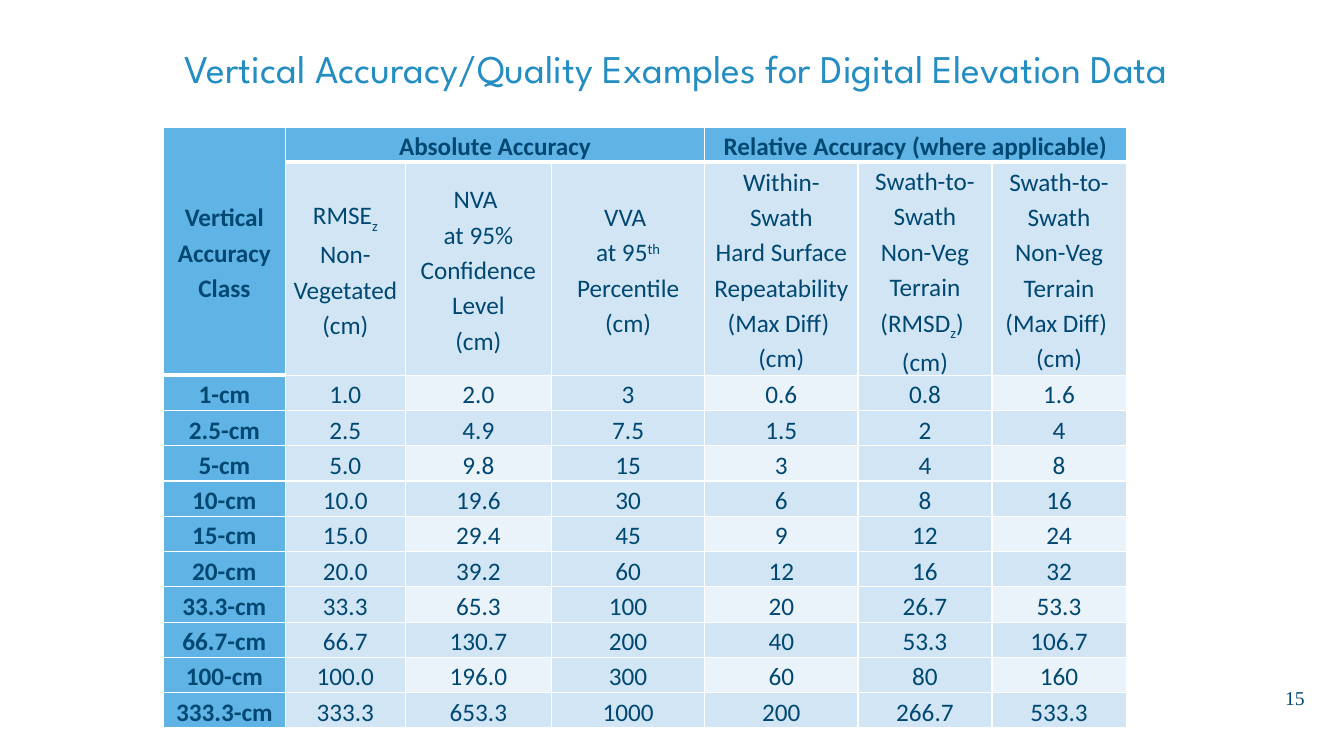
from dataclasses import dataclass

import lxml.etree
import pptx
import pptx.dml.color
import pptx.enum.text
import pptx.oxml.ns
import pptx.util

Inches = pptx.util.Inches
Align = pptx.enum.text.PP_ALIGN
Anchor = pptx.enum.text.MSO_ANCHOR

INK, BLUE, PALE, LIGHT, WHITE = "004872", "5FB4E5", "D2E5F5", "EAF2FA", "FFFFFF"


@dataclass(frozen=True)
class Bit:
    text: str
    shift: int = 0


@dataclass(frozen=True)
class Head:
    row: int
    col: int
    lines: tuple[tuple[Bit, ...], ...]
    rows: int = 1
    cols: int = 1


@dataclass(frozen=True)
class Label:
    text: str
    box: tuple[float, float, float, float]
    font: str
    size: int
    ink: str
    align: Align
    anchor: Anchor
    wrap: bool
    inset: float


def plain(*lines: str) -> tuple[tuple[Bit, ...], ...]:
    return tuple((Bit(line),) for line in lines)


LABELS = (
    Label("15", (12.68, 6.67, 0.35, 0.5), "Times New Roman", 14, INK,
          Align.RIGHT, Anchor.MIDDLE, False, 0),
    Label("Vertical Accuracy/Quality Examples for Digital Elevation Data",
          (0.7, 0.39, 12.01, 1.25), "League Spartan", 28, "248DC1",
          Align.CENTER, Anchor.TOP, True, 0.09),
)
GROUPS = (
    Head(0, 0, plain("Vertical Accuracy Class"), rows=2),
    Head(0, 1, plain("Absolute Accuracy"), cols=3),
    Head(0, 4, plain("Relative Accuracy (where applicable)"), cols=3),
)
UNIT = plain("(cm)")
SWATH = plain("Swath-to-Swath", "Non-Veg Terrain")
LIMIT = plain("(Max Diff) ")
FIELDS = (
    ((Bit("RMSE"), Bit("z", -25)),) + plain("Non-Vegetated "),
    plain("NVA ", "at 95%", "Confidence Level"),
    plain("VVA ") + ((Bit("at 95"), Bit("th", 30), Bit(" Percentile")),),
    plain("Within-Swath", "Hard Surface Repeatability") + LIMIT,
    SWATH + ((Bit("(RMSD"), Bit("z", -25), Bit(") ")),),
    SWATH + LIMIT,
)
DATA = (
    ("1-cm", "1.0", "2.0", "3", "0.6", "0.8", "1.6"),
    ("2.5-cm", "2.5", "4.9", "7.5", "1.5", "2", "4"),
    ("5-cm", "5.0", "9.8", "15", "3", "4", "8"),
    ("10-cm", "10.0", "19.6", "30", "6", "8", "16"),
    ("15-cm", "15.0", "29.4", "45", "9", "12", "24"),
    ("20-cm", "20.0", "39.2", "60", "12", "16", "32"),
    ("33.3-cm", "33.3", "65.3", "100", "20", "26.7", "53.3"),
    ("66.7-cm", "66.7", "130.7", "200", "40", "53.3", "106.7"),
    ("100-cm", "100.0", "196.0", "300", "60", "80", "160"),
    ("333.3-cm", "333.3", "653.3", "1000", "200", "266.7", "533.3"),
)
WIDTHS = (1.21, 1.19, 1.45, 1.52, 1.52, 1.33, 1.33)
HEIGHTS = (0.33, 1.75) + (0.35,) * len(DATA)


def tint(code: str) -> pptx.dml.color.RGBColor:
    return pptx.dml.color.RGBColor.from_string(code)


def style(para, font: str, size: int, ink: str, align: Align, bold: bool = False) -> None:
    para.alignment = align
    para.font.name = font
    para.font.size = pptx.util.Pt(size)
    para.font.bold = bold
    para.font.color.rgb = tint(ink)


def draw_label(slide, label: Label) -> None:
    frame = slide.shapes.add_textbox(*map(Inches, label.box)).text_frame
    frame.word_wrap = label.wrap
    frame.vertical_anchor = label.anchor
    frame.margin_left = Inches(label.inset)
    frame.margin_right = Inches(0.09)
    para = frame.paragraphs[0]
    para.add_run().text = label.text
    style(para, label.font, label.size, label.ink, label.align)


def rule(cell, base: int) -> None:
    props = cell._tc.get_or_add_tcPr()
    qn = pptx.oxml.ns.qn
    for side, width in (("L", 1), ("R", 1), ("T", 1), ("B", base)):
        line = lxml.etree.SubElement(props, qn(f"a:ln{side}"), w=str(pptx.util.Pt(width)))
        fill = lxml.etree.SubElement(line, qn("a:solidFill"))
        lxml.etree.SubElement(fill, qn("a:srgbClr"), val=WHITE)


def paint(cell, fill: str, base: int = 1) -> None:
    rule(cell, base)
    cell.fill.solid()
    cell.fill.fore_color.rgb = tint(fill)
    cell.margin_left = cell.margin_right = Inches(0.07)
    cell.margin_top = cell.margin_bottom = 0
    cell.vertical_anchor = Anchor.MIDDLE


def write(cell, lines: tuple[tuple[Bit, ...], ...], bold: bool = False) -> None:
    frame = cell.text_frame
    for index, bits in enumerate(lines):
        para = frame.add_paragraph() if index else frame.paragraphs[0]
        para.line_spacing = 1.15
        for bit in bits:
            run = para.add_run()
            run.text = bit.text
            if bit.shift:
                run._r.get_or_add_rPr().set("baseline", str(bit.shift * 1000))
        style(para, "Calibri", 18, INK, Align.CENTER, bold)


def draw_table(slide) -> None:
    size = Inches(sum(WIDTHS)), Inches(sum(HEIGHTS))
    table = slide.shapes.add_table(
        len(HEIGHTS), len(WIDTHS), Inches(1.62), Inches(1.26), *size).table
    table.first_row = table.horz_banding = False
    for column, width in zip(table.columns, WIDTHS):
        column.width = Inches(width)
    for row, height in zip(table.rows, HEIGHTS):
        row.height = Inches(height)
    for head in GROUPS:
        cell = table.cell(head.row, head.col)
        last = head.row + head.rows - 1, head.col + head.cols - 1
        for row in range(head.row, last[0] + 1):
            for col in range(head.col, last[1] + 1):
                paint(table.cell(row, col), BLUE, 3)
        cell.merge(table.cell(*last))
        write(cell, head.lines, True)
    for col, lines in enumerate(FIELDS, 1):
        cell = table.cell(1, col)
        paint(cell, PALE)
        write(cell, lines + UNIT)
    for row, values in enumerate(DATA):
        for col, value in enumerate(values):
            cell = table.cell(row + 2, col)
            light = row % 2 == 0 and col in (2, 4, 6)
            paint(cell, BLUE if col == 0 else LIGHT if light else PALE)
            write(cell, plain(value), col == 0)


def main() -> None:
    deck = pptx.Presentation()
    deck.slide_width, deck.slide_height = Inches(13.33), Inches(7.5)
    slide = deck.slides.add_slide(deck.slide_layouts[6])
    for label in LABELS:
        draw_label(slide, label)
    draw_table(slide)
    deck.save("out.pptx")


if __name__ == "__main__":
    main()
